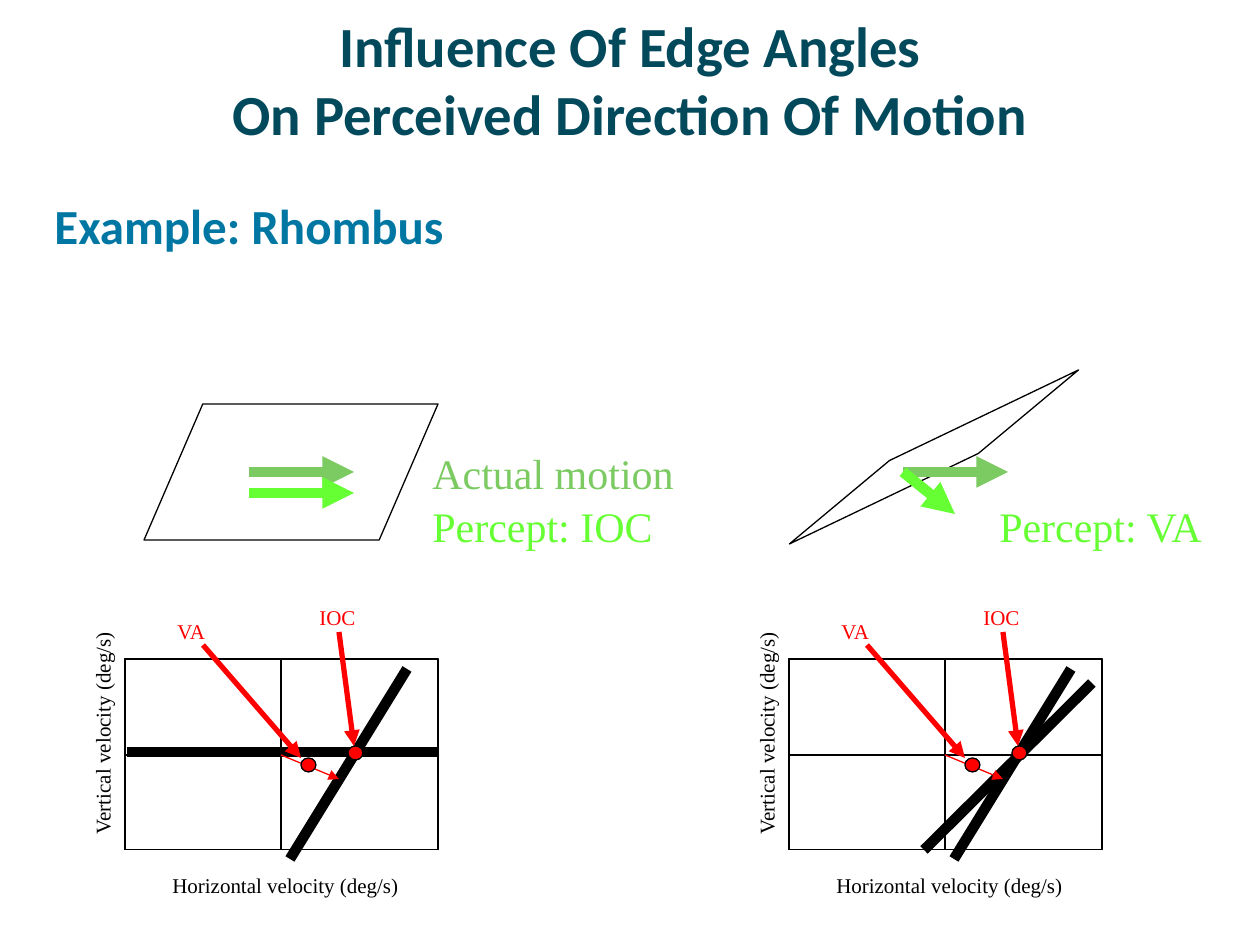
from dataclasses import dataclass

from lxml import etree
from pptx import Presentation
from pptx.dml.color import RGBColor
from pptx.enum.shapes import MSO_CONNECTOR, MSO_SHAPE
from pptx.enum.text import MSO_ANCHOR, PP_ALIGN
from pptx.oxml.ns import qn
from pptx.util import Emu, Pt

PX = 914400 // 126
RECT, DOT = MSO_SHAPE.RECTANGLE, MSO_SHAPE.OVAL
SLANT, SKEW = MSO_SHAPE.FLOWCHART_DATA, MSO_SHAPE.PARALLELOGRAM
LINE = MSO_CONNECTOR.STRAIGHT
LEFT, MID = PP_ALIGN.LEFT, PP_ALIGN.CENTER
TOP, CENTER = MSO_ANCHOR.TOP, MSO_ANCHOR.MIDDLE


@dataclass(frozen=True)
class Theme:
    white: str = "FFFFFF"
    black: str = "000000"
    red: str = "FF0000"
    real: str = "7CCA62"
    seen: str = "66FF33"
    title: str = "03495C"
    head: str = "0076A3"
    sans: str = "Calibri"
    serif: str = "Times New Roman"
    title_size: float = 32.4
    head_size: int = 28
    note_size: int = 24
    small: int = 12
    thin: float = 0.75
    bold: int = 3
    thick: int = 6


T = Theme()


def px(*nums):
    return [Emu(n * PX) for n in nums]


def rgb(code):
    return RGBColor.from_string(code)


def shape(parent, kind, x, y, w, h, fill=None, turn=0):
    part = parent.add_shape(kind, *px(x, y, w, h))
    part.shadow.inherit = False
    part.rotation = turn
    if fill:
        part.fill.solid()
        part.fill.fore_color.rgb = rgb(fill)
    else:
        part.fill.background()
    part.line.color.rgb = rgb(T.black)
    part.line.width = Pt(T.thin)
    return part


def line(parent, x1, y1, x2, y2, color=T.black, width=T.thin, arrow=False):
    part = parent.add_connector(LINE, *px(x1, y1, x2, y2))
    part.line.color.rgb = rgb(color)
    part.line.width = Pt(width)
    if arrow:
        tail = etree.SubElement(part.line._get_or_add_ln(), qn("a:tailEnd"))
        tail.set("type", "triangle")
    etree.SubElement(part._element.spPr, qn("a:effectLst"))


def text(parent, words, x, y, w, h, color=T.black, size=T.small, face=T.serif,
         bold=False, align=LEFT, anchor=TOP, wrap=False, turn=0):
    box = parent.add_textbox(*px(x, y, w, h))
    box.rotation = turn
    frame = box.text_frame
    frame.word_wrap, frame.vertical_anchor = wrap, anchor
    para = frame.paragraphs[0]
    para.text, para.alignment = words, align
    style = {"name": face, "size": Pt(size), "bold": bold}
    for run in para.runs:
        for key, value in style.items():
            setattr(run.font, key, value)
        run.font.color.rgb = rgb(color)


def heads(parent, x, y, w):
    """Title and the line under it."""
    text(parent, "Influence Of Edge Angles\vOn Perceived Direction Of Motion",
         x + 9, y, w - 36, 116, T.title, T.title_size, T.sans, True,
         MID, CENTER, True)
    text(parent, "Example: Rhombus", x - 12, y + 168, w - 14, 80,
         T.head, T.head_size, T.sans, True, wrap=True)


def plot(parent, x, y, w, h, edges):
    """Velocity plot; edges are the thick lines, relative to the box."""
    # Frame and axes
    shape(parent, RECT, x, y, w, h, T.white)
    grid = parent.add_group_shape().shapes
    shape(grid, RECT, x, y, w, h)
    mx, my = x + w // 2, y + h // 2 + 1
    line(grid, mx, y, mx, y + h)
    line(grid, x, my, x + w, my)
    text(parent, "Horizontal velocity (deg/s)", x + 35, y + 207, 252, 38)
    text(parent, "Vertical velocity (deg/s)", x - 138, y + 53, 231, 38, turn=270)
    # Edge constraints
    for x1, y1, x2, y2 in edges:
        line(parent, x + x1, y + y1, x + x2, y + y2, width=T.thick)
    # Mean vector, then each marked point with its name and pointer
    line(parent, mx, my, x + 214, y + 120, T.red, arrow=True)
    marks = [("IOC", 182, -61, 62, (214, -27, 229, 87), (223, 87)),
             ("VA", 40, -47, 55, (78, -14, 176, 99), (176, 99))]
    for name, tx, ty, tw, (x1, y1, x2, y2), (dx, dy) in marks:
        shape(parent, DOT, x + dx, y + dy, 15, 14, T.red)
        text(parent, name, x + tx, y + ty, tw, 38, T.red)
        line(parent, x + x1, y + y1, x + x2, y + y2, T.red, T.bold, True)


def motion(parent, x, y, seen):
    """Arrows for real and seen motion; seen is relative to x, y."""
    x1, y1, x2, y2 = seen
    line(parent, x, y, x + 105, y, T.real, T.thick, True)
    line(parent, x + x1, y + y1, x + x2, y + y2, T.seen, T.thick, True)


def notes(parent, x, y, rows):
    for row, (words, w, color) in enumerate(rows):
        text(parent, words, x, y + row * 53, w, 63, color, T.note_size)


def main():
    deck = Presentation()
    deck.slide_width, deck.slide_height = px(1260, 945)
    parts = deck.slides.add_slide(deck.slide_layouts[6]).shapes
    heads(parts, 54, 21, 1170)

    # Rhombus forms
    shape(parts, SLANT, 144, 404, 294, 136, T.white)
    thin = shape(parts, SKEW, 766, 441, 336, 32, T.white, 334.4)
    thin.adjustments[0] = 3.95

    # Plots
    steep = (282, 10, 165, 200)
    pairs = [(125, (2, 93, 313, 93)), (789, (135, 191, 303, 24))]
    for x, edge in pairs:
        plot(parts, x, 659, 313, 191, [steep, edge])

    # Motion arrows and their names
    motion(parts, 249, 472, (0, 21, 105, 21))
    motion(parts, 903, 472, (0, 0, 52, 42))
    notes(parts, 420, 441, [("Actual motion", 276, T.real),
                            ("Percept: IOC", 248, T.seen)])
    notes(parts, 987, 494, [("Percept: VA", 228, T.seen)])

    deck.save("out.pptx")


if __name__ == "__main__":
    main()
